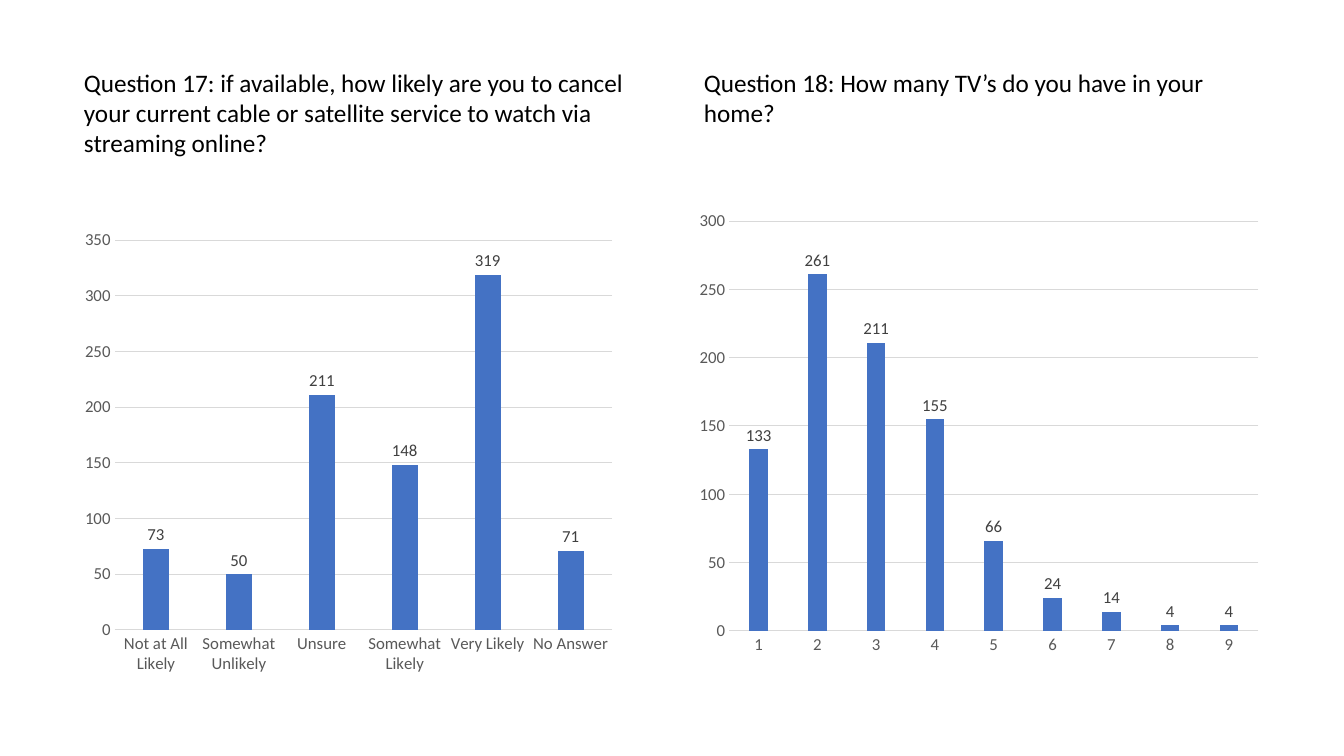
import dataclasses
import pptx
import pptx.chart.data
import pptx.dml.color
import pptx.enum.chart
import pptx.enum.text
import pptx.util

# Boxes are left, top, width, height in px
QUESTIONS = [
    {
        "text": "Question 17: if available, how likely are you to cancel your current "
                "cable or satellite service to watch via streaming online?",
        "text_box": (74, 62, 577, 102),
        "chart_box": (74, 221, 549, 462),
        "answers": {"Not at All Likely": 73, "Somewhat Unlikely": 50, "Unsure": 211,
                    "Somewhat Likely": 148, "Very Likely": 319, "No Answer": 71},
        "axis_max": 350,
    },
    {
        "text": "Question 18: How many TV’s do you have in your home?",
        "text_box": (694, 62, 543, 72),
        "chart_box": (688, 202, 582, 462),
        "answers": {"1": 133, "2": 261, "3": 211, "4": 155, "5": 66,
                    "6": 24, "7": 14, "8": 4, "9": 4},
        "axis_max": 300,
    },
]
AXIS_STEP = 50
SLIDE_SIZE = (1344, 756)
EMU_PER_PX = 914400 / 100.8


@dataclasses.dataclass(frozen=True)
class Theme:
    font: str = "Calibri"
    question_size: int = 18
    chart_size: int = 12
    text: str = "000000"
    bar: str = "4472C4"
    axis: str = "595959"
    label: str = "404040"
    grid: str = "D9D9D9"


THEME = Theme()


def px(*lengths):
    return [pptx.util.Emu(round(n * EMU_PER_PX)) for n in lengths]


def rgb(color):
    return pptx.dml.color.RGBColor.from_string(color)


def style_font(font, size, color):
    font.name = THEME.font
    font.size = pptx.util.Pt(size)
    font.color.rgb = rgb(color)


def style_line(line):
    line.color.rgb = rgb(THEME.grid)
    line.width = pptx.util.Pt(0.75)


def add_question(s, text, box):
    tf = s.shapes.add_textbox(*px(*box)).text_frame
    tf.word_wrap = True
    tf.auto_size = pptx.enum.text.MSO_AUTO_SIZE.SHAPE_TO_FIT_TEXT
    tf.text = text
    style_font(tf.paragraphs[0].runs[0].font, THEME.question_size, THEME.text)


def add_answers(s, answers, box, axis_max):
    data = pptx.chart.data.CategoryChartData()
    data.categories = list(answers)
    data.add_series("Series 1", list(answers.values()))
    kind = pptx.enum.chart.XL_CHART_TYPE.COLUMN_CLUSTERED
    chart = s.shapes.add_chart(kind, *px(*box), data).chart
    chart.has_legend = False
    chart.has_title = False
    style_font(chart.font, THEME.chart_size, THEME.axis)

    for axis in (chart.category_axis, chart.value_axis):
        axis.major_tick_mark = pptx.enum.chart.XL_TICK_MARK.NONE
        axis.minor_tick_mark = pptx.enum.chart.XL_TICK_MARK.NONE
        style_font(axis.tick_labels.font, THEME.chart_size, THEME.axis)
    style_line(chart.category_axis.format.line)
    values = chart.value_axis
    values.minimum_scale = 0
    values.maximum_scale = axis_max
    values.major_unit = AXIS_STEP
    values.format.line.fill.background()
    style_line(values.major_gridlines.format.line)

    plot = chart.plots[0]
    plot.vary_by_categories = False
    plot.gap_width = 219
    plot.overlap = -27
    bars = plot.series[0]
    bars.format.fill.solid()
    bars.format.fill.fore_color.rgb = rgb(THEME.bar)
    labels = bars.data_labels
    labels.show_value = True
    labels.position = pptx.enum.chart.XL_LABEL_POSITION.OUTSIDE_END
    style_font(labels.font, THEME.chart_size, THEME.label)


def main():
    prs = pptx.Presentation()
    prs.slide_width, prs.slide_height = px(*SLIDE_SIZE)
    s = prs.slides.add_slide(prs.slide_layouts.get_by_name("Blank"))
    for q in QUESTIONS:
        add_answers(s, q["answers"], q["chart_box"], q["axis_max"])
        add_question(s, q["text"], q["text_box"])
    prs.save("out.pptx")


if __name__ == "__main__":
    main()
